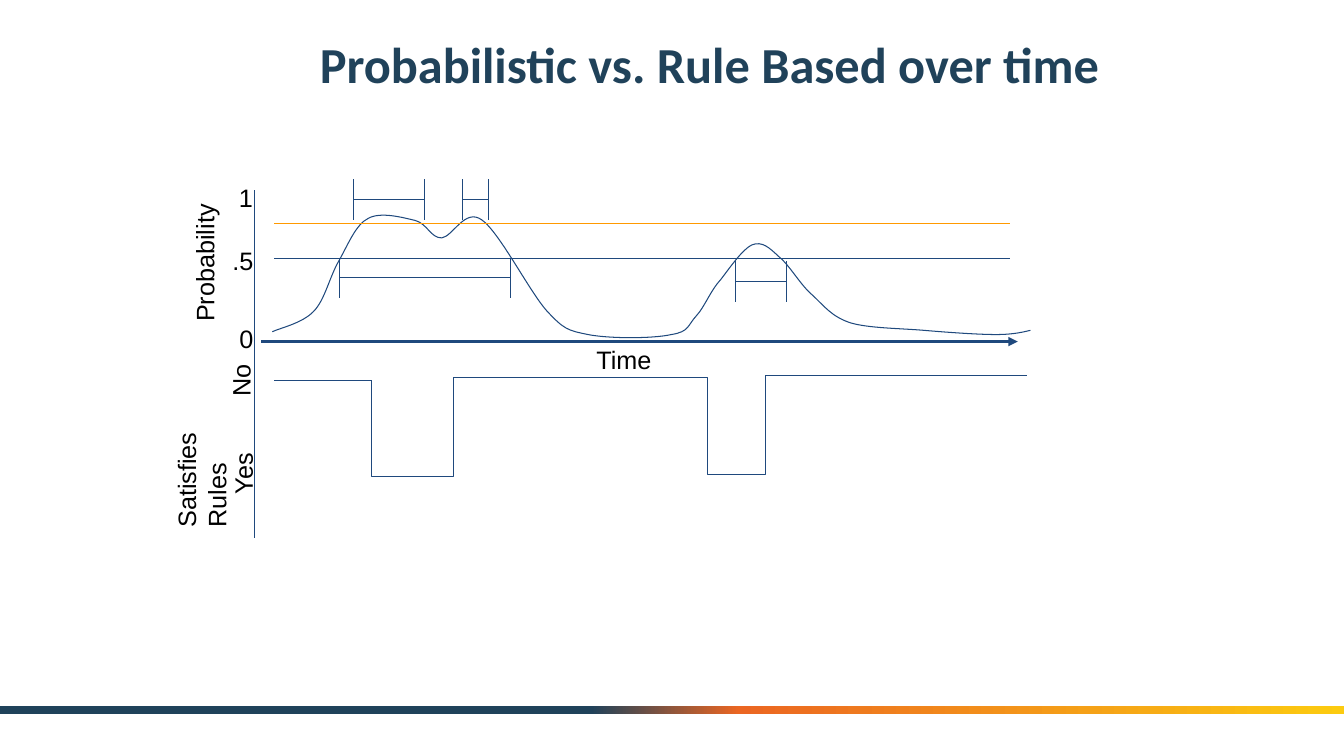
from lxml import etree
from pptx import Presentation
from pptx.dml.color import RGBColor
from pptx.enum.shapes import MSO_CONNECTOR, MSO_SHAPE
from pptx.enum.text import MSO_ANCHOR, PP_ALIGN
from pptx.oxml.ns import qn
from pptx.util import Pt

STRAIGHT = MSO_CONNECTOR.STRAIGHT
RECTANGLE = MSO_SHAPE.RECTANGLE
TOP, MIDDLE = MSO_ANCHOR.TOP, MSO_ANCHOR.MIDDLE
LEFT, CENTER = PP_ALIGN.LEFT, PP_ALIGN.CENTER

NAVY = RGBColor(0x20, 0x42, 0x5A)
BLUE = RGBColor(0x1F, 0x49, 0x7D)
AMBER = RGBColor(0xFF, 0x99, 0x00)
ORANGE = RGBColor(0xEB, 0x66, 0x22)
YELLOW = RGBColor(0xFC, 0xCB, 0x10)
BLACK = RGBColor(0, 0, 0)

SLIDE_WIDTH, SLIDE_HEIGHT = 960, 540
FOOTER_STOPS = [(0, NAVY), (44, NAVY), (55, ORANGE), (100, YELLOW)]

LABELS = [
    ("Time", 419, 239, 63.5, 49, 0, LEFT),
    ("Probability", 94.5, 170.5, 100, 33, 270, LEFT),
    ("Satisfies Rules", 75, 311, 113, 33, 270, LEFT),
    ("0", 164, 224, 19, 51, 0, LEFT),
    (".5", 159, 168, 30, 51, 0, LEFT),
    ("1", 163.5, 123, 19, 43, 0, LEFT),
    ("Yes", 147.5, 322, 49, 33, 270, CENTER),
    ("No", 150, 255, 40.5, 33, 270, CENTER),
]

CURVE_START = (194.5, 237)
CURVE_SEGMENTS = [
    ((199.5, 234.5), (216, 231), (224, 222.5)),
    ((232, 214.5), (235.5, 197.5), (242, 186.5)),
    ((248.5, 175), (254, 160.5), (263, 156)),
    ((272, 151), (288, 155.5), (296.5, 157.5)),
    ((305.5, 160), (307.5, 170), (315.5, 170)),
    ((323.5, 169), (332, 148.5), (344, 157)),
    ((356.5, 165.5), (378, 208), (390.5, 222)),
    ((403, 235.5), (405.5, 236), (420, 239)),
    ((435, 242), (466.5, 242), (479.5, 239)),
    ((492.5, 237), (491, 232.5), (497.5, 225.5)),
    ((503.5, 219), (507.5, 207.5), (515, 199.5)),
    ((521.5, 191), (530.5, 178), (537, 175)),
    ((544.5, 172), (549.5, 177), (556.5, 183.5)),
    ((564, 189.5), (572, 204), (580.5, 211)),
    ((589, 219), (594, 226), (607, 230.5)),
    ((620, 234.5), (642, 234.5), (660, 236)),
    ((677.5, 237.5), (699, 239), (711.5, 239)),
    ((724.5, 239), (731.5, 237), (736, 236)),
]

RULE_STEPS = [
    (265.5, 272), (265.5, 340.5), (324, 340.5), (324, 270), (505.5, 270),
    (505.5, 339), (546.5, 339), (546.5, 268.5), (733.5, 268.5),
]

BRACKETS = [
    (242.5, 365, 198.5), (252.5, 303, 142.5),
    (330.5, 349, 142.5), (525.5, 561.5, 201),
]
BRACKET_HALF_HEIGHT = 14.4


class Sketch:
    """Draws styled elements on one slide, with lengths in points."""

    def __init__(self, slide):
        self.shapes = slide.shapes
        self.line_color = BLUE
        self.line_width = 0.75

    def text(self, content, left, top, width, height, rotation=0, align=LEFT,
             font="Arial", size=18, color=BLACK, bold=False, anchor=TOP, inset=7.2):
        box = self.shapes.add_textbox(Pt(left), Pt(top), Pt(width), Pt(height))
        box.rotation = rotation
        frame = box.text_frame
        frame.word_wrap = True
        frame.vertical_anchor = anchor
        frame.margin_left = frame.margin_right = Pt(7.2)
        frame.margin_top = frame.margin_bottom = Pt(inset)
        frame.text = content
        paragraph = frame.paragraphs[0]
        paragraph.alignment = align
        run_font = paragraph.runs[0].font
        run_font.name, run_font.size, run_font.bold = font, Pt(size), bold
        run_font.color.rgb = color

    def line(self, x1, y1, x2, y2, color=None, width=None, arrow=False, shapes=None):
        target = self.shapes if shapes is None else shapes
        connector = target.add_connector(STRAIGHT, Pt(x1), Pt(y1), Pt(x2), Pt(y2))
        connector.line.color.rgb = color or self.line_color
        connector.line.width = Pt(width or self.line_width)
        properties = connector._element.spPr
        if arrow:
            etree.SubElement(properties.find(qn("a:ln")), qn("a:tailEnd"), type="triangle")
        etree.SubElement(properties, qn("a:effectLst"))

    def bracket(self, left, right, middle):
        shapes = self.shapes.add_group_shape().shapes
        self.line(left, middle, right, middle, shapes=shapes)
        for x in (left, right):
            self.line(x, middle - BRACKET_HALF_HEIGHT, x, middle + BRACKET_HALF_HEIGHT,
                      shapes=shapes)

    def polyline(self, points):
        vertices = [(Pt(x), Pt(y)) for x, y in points]
        builder = self.shapes.build_freeform(*vertices[0])
        builder.add_line_segments(vertices[1:], close=False)
        shape = builder.convert_to_shape()
        shape.shadow.inherit = False
        shape.fill.background()
        shape.line.color.rgb = self.line_color
        shape.line.width = Pt(self.line_width)
        return shape

    def curve(self, start, segments):
        shape = self.polyline([start] + [segment[-1] for segment in segments])
        straight_parts = list(shape._element.iter(qn("a:lnTo")))
        for part, segment in zip(straight_parts, segments):
            bezier = etree.Element(qn("a:cubicBezTo"))
            for x, y in segment:
                etree.SubElement(bezier, qn("a:pt"), x=str(Pt(x) - shape.left),
                                 y=str(Pt(y) - shape.top))
            part.getparent().replace(part, bezier)

    def gradient_bar(self, left, top, width, height, stops):
        bar = self.shapes.add_shape(RECTANGLE, Pt(left), Pt(top), Pt(width), Pt(height))
        bar.shadow.inherit = False
        bar.line.fill.background()
        bar.fill.gradient()
        bar.fill.gradient_angle = 0
        stop_list = bar._element.spPr.find(qn("a:gradFill")).find(qn("a:gsLst"))
        for stop in list(stop_list):
            stop_list.remove(stop)
        for percent, color in stops:
            stop = etree.SubElement(stop_list, qn("a:gs"), pos=str(percent * 1000))
            etree.SubElement(stop, qn("a:srgbClr"), val=str(color))


def main():
    presentation = Presentation()
    presentation.slide_width = Pt(SLIDE_WIDTH)
    presentation.slide_height = Pt(SLIDE_HEIGHT)
    sketch = Sketch(presentation.slides.add_slide(presentation.slide_layouts[6]))

    sketch.gradient_bar(0, 504, SLIDE_WIDTH, 6, FOOTER_STOPS)
    sketch.text("Probabilistic vs. Rule Based over time", 210, 12, 594, 66, align=CENTER,
                font="Calibri", size=36, color=NAVY, bold=True, anchor=MIDDLE, inset=3.6)
    for label in LABELS:
        sketch.text(*label)

    sketch.line(186.5, 244, 727, 244, width=2.25, arrow=True)
    sketch.line(182, 136, 182, 384.5)
    sketch.curve(CURVE_START, CURVE_SEGMENTS)
    sketch.line(196, 271.5, 265.5, 271.5)
    sketch.polyline(RULE_STEPS)
    sketch.line(196, 184.5, 721.5, 184.5)
    sketch.line(196, 160, 721.5, 160, color=AMBER)
    for bracket in BRACKETS:
        sketch.bracket(*bracket)

    presentation.save("out.pptx")


if __name__ == "__main__":
    main()
